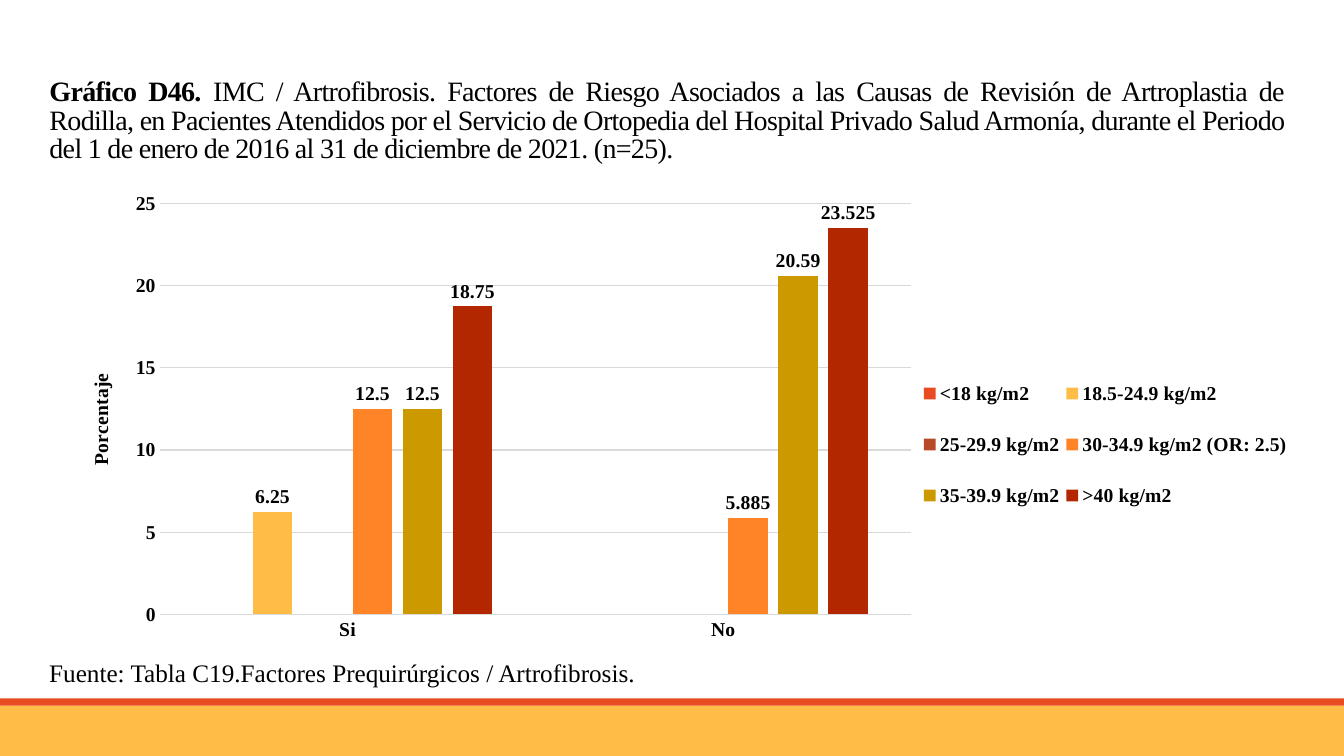
from lxml.etree import SubElement
from pptx import Presentation
from pptx.chart.data import CategoryChartData
from pptx.dml.color import RGBColor
from pptx.enum.chart import XL_CHART_TYPE, XL_LABEL_POSITION, XL_LEGEND_POSITION, XL_TICK_MARK
from pptx.enum.shapes import MSO_SHAPE
from pptx.enum.text import MSO_ANCHOR, PP_ALIGN
from pptx.oxml.ns import qn
from pptx.util import Inches, Pt

# Content
TITLE = [
    ("Gráfico D46.", True),
    (" IMC / Artrofibrosis. Factores de Riesgo Asociados a las Causas de Revisión de "
     "Artroplastia de Rodilla, en Pacientes Atendidos por el Servicio de Ortopedia del "
     "Hospital Privado Salud Armonía, durante el Periodo del 1 de enero de 2016 al 31 de "
     "diciembre de 2021. (n=25).", False),
]
SOURCE = "Fuente: Tabla C19.Factores Prequirúrgicos / Artrofibrosis."
AXIS_TITLE = "Porcentaje"
CATEGORIES = ["Si", "No"]
SERIES = [
    ("<18 kg/m2", (None, None), "red"),
    ("18.5-24.9 kg/m2", (6.25, None), "yellow"),
    ("25-29.9 kg/m2", (None, None), "brick"),
    ("30-34.9 kg/m2 (OR: 2.5)", (12.5, 5.885), "orange"),
    ("35-39.9 kg/m2", (12.5, 20.59), "mustard"),
    (">40 kg/m2", (18.75, 23.525), "maroon"),
]
COLORS = {"red": "E84C22", "yellow": "FFBD47", "brick": "B64926", "orange": "FF8427",
          "mustard": "CC9900", "maroon": "B22600", "black": "000000", "grid": "D9D9D9"}
FONT = "Times New Roman"

# Layout, in inches; chart parts as shares of the chart frame
WIDTH, HEIGHT = 13.33, 7.5
MARGIN, CONTENT_WIDTH = 0.39, 12.44
BAND_HEIGHT, STRIPE_HEIGHT = 0.5, 0.07
BAND_TOP = HEIGHT - BAND_HEIGHT
CHART_TOP, CHART_HEIGHT = 1.84, 4.63
PLOT_AREA = {"x": 0.096, "y": 0.039, "w": 0.599, "h": 0.88}
LEGEND_AREA = {"x": 0.7, "y": 0.36, "w": 0.3, "h": 0.39}
AXIS_TITLE_AREA = {"x": 0.036, "y": 0.395}


def color(name):
    return RGBColor.from_string(COLORS[name])


def set_font(font, size, bold):
    font.name, font.size, font.bold = FONT, Pt(size), bold
    font.color.rgb = color("black")


def place(element, area, before, inner=False):
    """Give a chart part a fixed place, ahead of the first child named in before."""
    for old in element.findall(qn("c:layout")):
        element.remove(old)
    layout = SubElement(element, qn("c:layout"))
    manual = SubElement(layout, qn("c:manualLayout"))
    if inner:
        SubElement(manual, qn("c:layoutTarget")).set("val", "inner")
    for key in ("x", "y"):
        SubElement(manual, qn(f"c:{key}Mode")).set("val", "edge")
    for key, share in area.items():
        SubElement(manual, qn(f"c:{key}")).set("val", str(share))
    following = next((child for child in element
                      if child.tag in [qn(tag) for tag in before]), None)
    if following is not None:
        following.addprevious(layout)


deck = Presentation()
deck.slide_width, deck.slide_height = Inches(WIDTH), Inches(HEIGHT)
page = deck.slides.add_slide(deck.slide_layouts[5])

# Footer bands
for top, height, name in [(BAND_TOP, BAND_HEIGHT, "yellow"),
                          (BAND_TOP - STRIPE_HEIGHT, STRIPE_HEIGHT, "red")]:
    band = page.shapes.add_shape(MSO_SHAPE.RECTANGLE, 0, Inches(top),
                                 Inches(WIDTH), Inches(height))
    band.shadow.inherit = False
    band.fill.solid()
    band.fill.fore_color.rgb = color(name)
    band.line.fill.background()

# Title
title = page.shapes.title
title.left, title.top = Inches(MARGIN), Inches(0.41)
title.width, title.height = Inches(CONTENT_WIDTH), Inches(1.59)
title.text_frame.word_wrap = True
title.text_frame.vertical_anchor = MSO_ANCHOR.MIDDLE
para = title.text_frame.paragraphs[0]
para.alignment, para.line_spacing = PP_ALIGN.JUSTIFY, 0.85
para.space_before = Pt(0)
for text, bold in TITLE:
    span = para.add_run()
    span.text = text
    set_font(span.font, 20, bold)
    span.font._element.set("spc", "-50")

# Chart
data = CategoryChartData()
data.categories = CATEGORIES
for name, values, _ in SERIES:
    data.add_series(name, values)
chart = page.shapes.add_chart(
    XL_CHART_TYPE.COLUMN_CLUSTERED, Inches(MARGIN), Inches(CHART_TOP),
    Inches(CONTENT_WIDTH), Inches(CHART_HEIGHT), data).chart
chart.has_title = False
set_font(chart.font, 12, True)
plot = chart.plots[0]
plot.gap_width, plot.overlap, plot.vary_by_categories = 219, -27, False
for series, (_, values, name) in zip(plot.series, SERIES):
    series.format.fill.solid()
    series.format.fill.fore_color.rgb = color(name)
    series.invert_if_negative = False
    labels = series.data_labels
    labels.show_value = True
    labels.position = XL_LABEL_POSITION.OUTSIDE_END
    set_font(labels.font, 14 if any(values) else 12, True)

# Axes
for axis in (chart.category_axis, chart.value_axis):
    axis.major_tick_mark = axis.minor_tick_mark = XL_TICK_MARK.NONE
    set_font(axis.tick_labels.font, 14, True)
value_axis = chart.value_axis
value_axis.minimum_scale, value_axis.maximum_scale, value_axis.major_unit = 0, 25, 5
value_axis.format.line.fill.background()
for line in (chart.category_axis.format.line, value_axis.major_gridlines.format.line):
    line.color.rgb = color("grid")
    line.width = Pt(0.75)
axis_title = value_axis.axis_title
span = axis_title.text_frame.paragraphs[0].add_run()
span.text = AXIS_TITLE
set_font(span.font, 14, True)
body = axis_title.text_frame._txBody.find(qn("a:bodyPr"))
body.set("rot", "-5400000")
body.set("vert", "horz")

# Legend and fixed places
chart.has_legend = True
chart.legend.position = XL_LEGEND_POSITION.RIGHT
chart.legend.include_in_layout = False
set_font(chart.legend.font, 14, True)
place(chart.legend._element, LEGEND_AREA, ["c:overlay", "c:spPr", "c:txPr"])
place(axis_title._element, AXIS_TITLE_AREA, ["c:overlay", "c:spPr", "c:txPr"])
place(chart._chartSpace.chart.plotArea, PLOT_AREA, ["c:barChart"], inner=True)

# Source note
box = page.shapes.add_textbox(Inches(MARGIN), Inches(CHART_TOP + CHART_HEIGHT),
                              Inches(6.97), Inches(0.4))
box.text_frame.word_wrap = True
span = box.text_frame.paragraphs[0].add_run()
span.text = SOURCE
set_font(span.font, 18, False)

deck.save("out.pptx")
